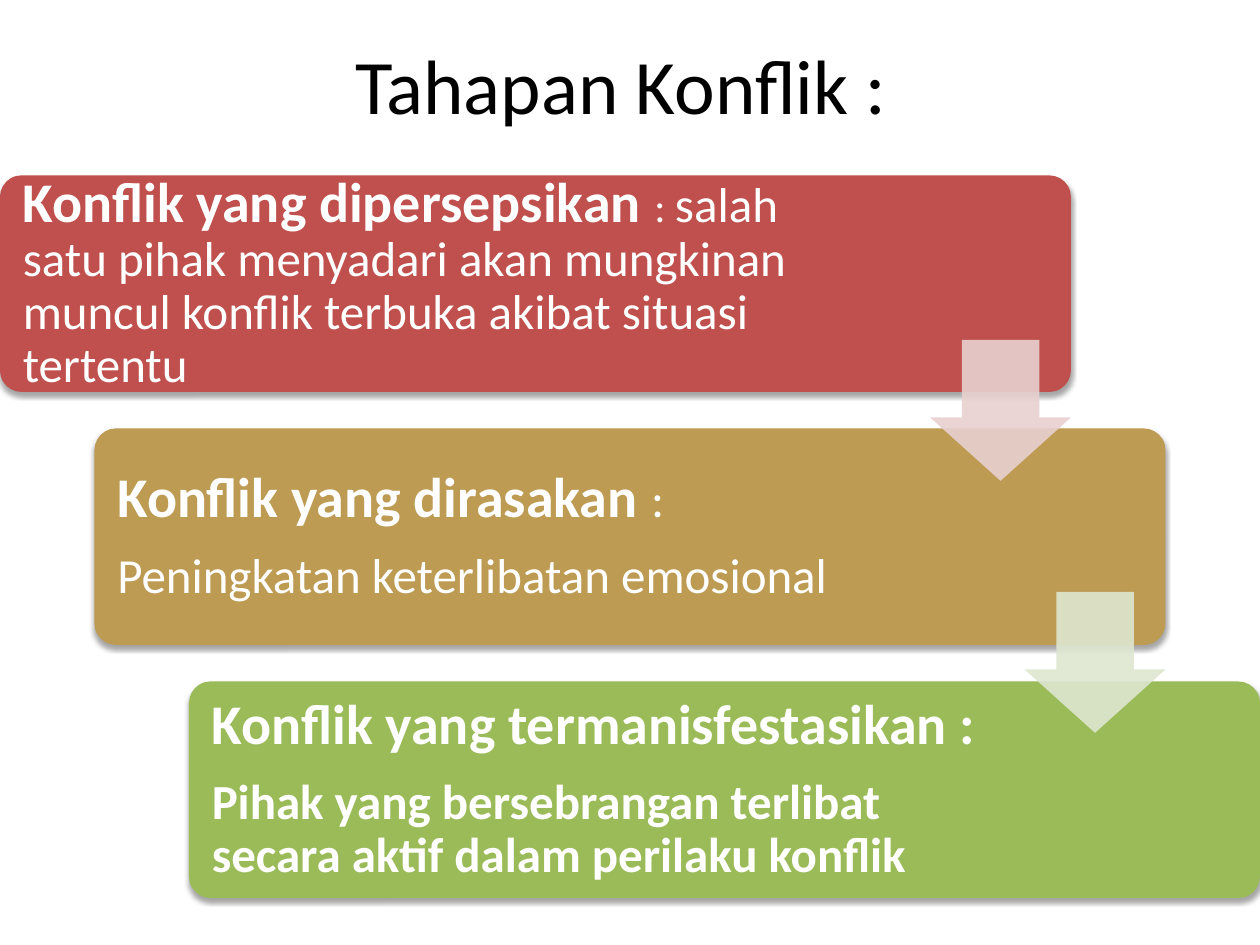
import pptx
import pptx.dml.color
import pptx.enum.shapes
import pptx.enum.text
import pptx.oxml
import pptx.oxml.ns
import pptx.util
import lxml.etree

Pt = pptx.util.Pt
SHAPE = pptx.enum.shapes.MSO_SHAPE
ALIGN = pptx.enum.text.PP_ALIGN
qn = pptx.oxml.ns.qn

COLORS = {
    "title": "000000",
    "text": "FFFFFF",
    "perceived": "C0504D",
    "felt": "BD9B53",
    "manifest": "9BBB59",
    "arrow_1": "E8D0D0",
    "arrow_2": "DEE7D1",
    "shadow": "000000",
}

STEP_X = 54
CARD_STEP_Y = 144.6
ARROW_STEP_Y = 144

STAGES = [
    ("perceived", 478, [[
        ("Konflik yang dipersepsikan ", 32, True),
        (": ", 24, False),
        ("salah satu pihak menyadari akan mungkinan muncul konflik "
         "terbuka akibat situasi tertentu", 28, False),
    ]]),
    ("felt", 470, [
        [("Konflik yang dirasakan ", 32, True), (":", 28, False)],
        [("Peningkatan keterlibatan emosional", 28, False)],
    ]),
    ("manifest", 470, [
        [("Konflik yang termanisfestasikan :", 32, True)],
        [("Pihak yang bersebrangan terlibat secara aktif dalam "
          "perilaku konflik", 28, True)],
    ]),
]


def rgb(name):
    return pptx.dml.color.RGBColor.from_string(COLORS[name])


def apply_format(obj, values):
    for name, value in values.items():
        setattr(obj, name, value)


def add_text(s, box, paragraphs, color, inset, paragraph_format):
    sp = s.shapes.add_textbox(*map(Pt, box))
    tf = sp.text_frame
    apply_format(tf, {
        "word_wrap": True,
        "vertical_anchor": pptx.enum.text.MSO_ANCHOR.MIDDLE,
        "margin_left": Pt(inset), "margin_right": Pt(inset),
        "margin_top": Pt(inset), "margin_bottom": Pt(inset),
    })
    for i, runs in enumerate(paragraphs):
        p = tf.add_paragraph() if i else tf.paragraphs[0]
        apply_format(p, paragraph_format)
        for text, size, bold in runs:
            r = p.add_run()
            r.text = text
            apply_format(r.font, {"name": "Calibri", "size": Pt(size), "bold": bold})
            r.font.color.rgb = rgb(color)


def add_filled(s, kind, box, color, adjustments):
    sp = s.shapes.add_shape(kind, *map(Pt, box))
    sp.shadow.inherit = False
    sp.fill.solid()
    sp.fill.fore_color.rgb = rgb(color)
    sp.line.fill.background()
    for i, value in enumerate(adjustments):
        sp.adjustments[i] = value
    return sp


def add_alpha(color_element, percent):
    lxml.etree.SubElement(color_element, qn("a:alpha"), val=str(percent * 1000))


def add_shadow(sp):
    effects = sp._element.spPr.find(qn("a:effectLst"))
    shadow = lxml.etree.SubElement(
        effects, qn("a:outerShdw"), blurRad=str(Pt(3.1)), dist=str(Pt(1.8)),
        dir="5400000", rotWithShape="0")
    color = lxml.etree.SubElement(shadow, qn("a:srgbClr"), val=COLORS["shadow"])
    add_alpha(color, 35)


def add_card(s, i, color, text_width, paragraphs):
    x, y = i * STEP_X, 100.2 + i * CARD_STEP_Y
    sp = add_filled(s, SHAPE.ROUNDED_RECTANGLE, (x, y, 612, 123.8), color, [0.1])
    add_shadow(sp)
    add_text(s, (x + 3.6, y + 3.6, text_width, 116.6), paragraphs, "text", 9.4,
             {"alignment": ALIGN.LEFT, "line_spacing": 0.9, "space_after": Pt(12)})


def add_arrow(s, i, color):
    box = (531.5 + i * STEP_X, 194.3 + i * ARROW_STEP_Y, 80.5, 80.5)
    sp = add_filled(s, SHAPE.DOWN_ARROW, box, color, [0.45, 0.55])
    sp.adjustments[0], sp.adjustments[1] = 0.55, 0.45
    add_alpha(sp._element.spPr.find(qn("a:solidFill"))[0], 90)


def main():
    prs = pptx.Presentation()
    prs.slide_width, prs.slide_height = Pt(720), Pt(540)
    s = prs.slides.add_slide(prs.slide_layouts[6])
    add_text(s, (31, 3, 648, 90), [[("Tahapan Konflik :", 44, False)]],
             "title", 3.6, {"alignment": ALIGN.CENTER})
    for i, stage in enumerate(STAGES):
        add_card(s, i, *stage)
    for i, color in enumerate(["arrow_1", "arrow_2"]):
        add_arrow(s, i, color)
    prs.save("out.pptx")


if __name__ == "__main__":
    main()
